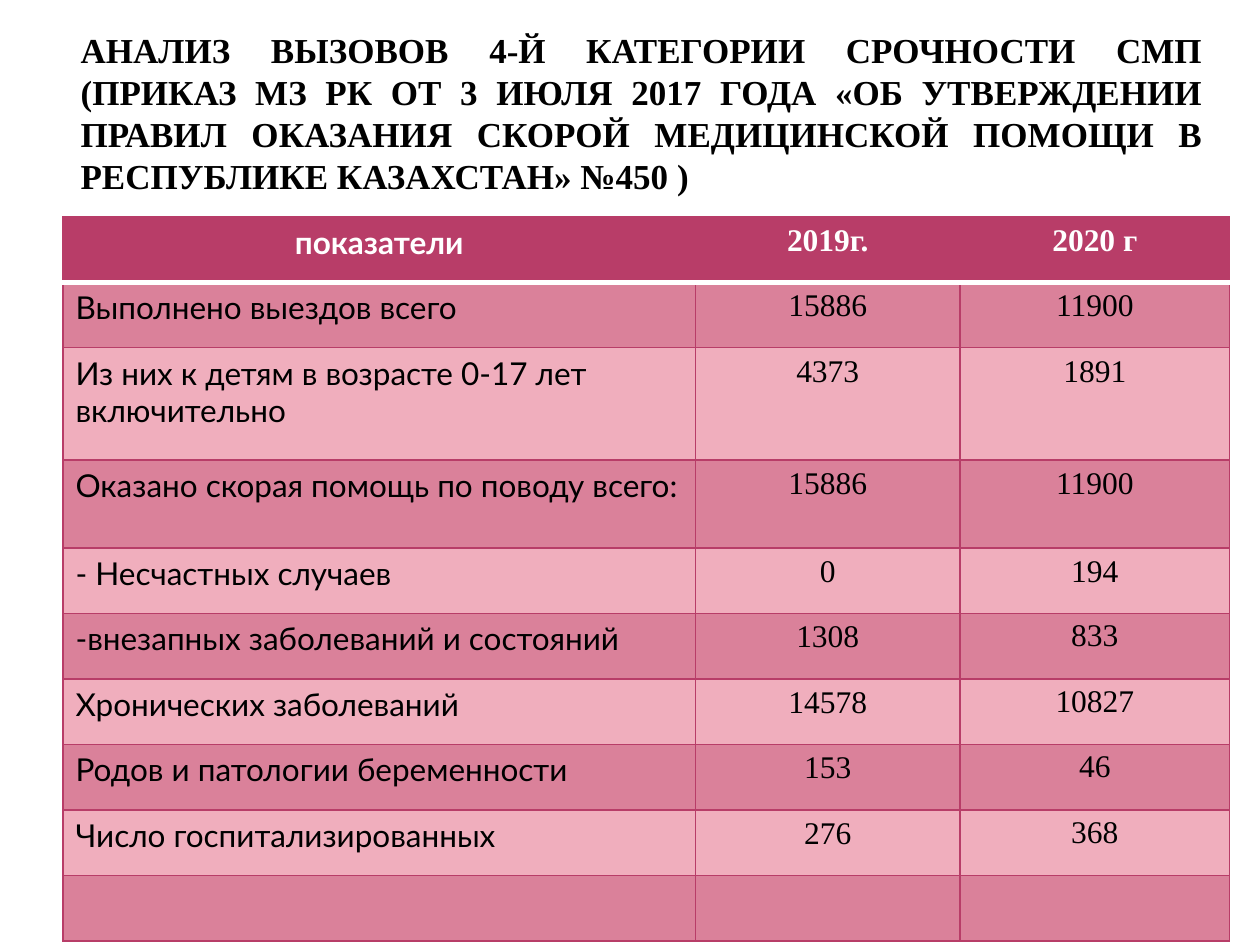
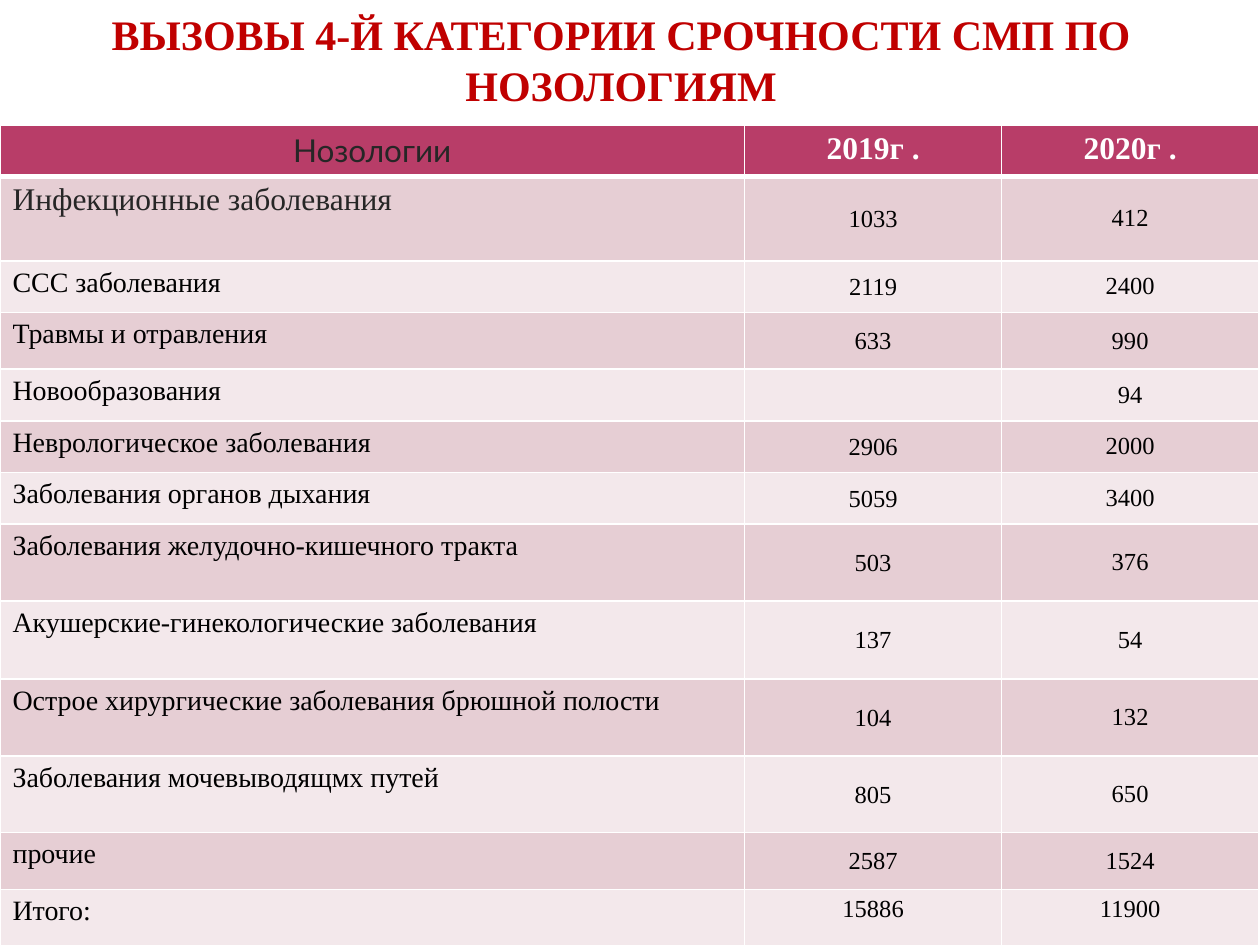
from lxml.etree import SubElement
from pptx import Presentation
from pptx.dml.color import RGBColor
from pptx.enum.text import MSO_ANCHOR, PP_ALIGN
from pptx.oxml.ns import qn
from pptx.util import Inches, Pt

COLORS = {
    "black": "000000", "white": "FFFFFF", "red": "C00000", "dark": "262626",
    "berry": "B83D68", "rose": "DA819A", "pink": "F0AEBD",
    "blush": "E6CED4", "pale": "F3E8EB",
}
SERIF, SANS = "Times New Roman", "Lato"

CALLS = {
    "title": "АНАЛИЗ ВЫЗОВОВ 4-Й КАТЕГОРИИ СРОЧНОСТИ СМП (ПРИКАЗ МЗ РК ОТ 3 ИЮЛЯ 2017 ГОДА "
             "«ОБ УТВЕРЖДЕНИИ ПРАВИЛ ОКАЗАНИЯ СКОРОЙ МЕДИЦИНСКОЙ ПОМОЩИ В РЕСПУБЛИКЕ КАЗАХСТАН» №450 )",
    "title_at": (0.59, 0.44, 9, 1.12),
    "title_style": (20, "black", PP_ALIGN.JUSTIFY, 0),
    "table_at": (0.5, 1.72),
    "columns": (5.02, 2.1, 2.14),
    "heights": (0.52, 0.52, 0.89, 0.7) + (0.52,) * 6,
    "bands": ("rose", "pink"),
    "border": ("berry", 0.9),
    "rows": [
        ("показатели", "2019г.", "2020 г"),
        ("Выполнено выездов всего", "15886", "11900"),
        ("Из них к детям в возрасте 0-17 лет включительно", "4373", "1891"),
        ("Оказано скорая помощь по поводу всего:", "15886", "11900"),
        ("- Несчастных случаев", "0", "194"),
        ("-внезапных заболеваний и состояний", "1308", "833"),
        ("Хронических заболеваний", "14578", "10827"),
        ("Родов и патологии беременности", "153", "46"),
        ("Число госпитализированных", "276", "368"),
        ("", "", ""),
    ],
}

DISEASES = {
    "title": "ВЫЗОВЫ 4-Й КАТЕГОРИИ СРОЧНОСТИ СМП ПО НОЗОЛОГИЯМ",
    "title_at": (0.43, 0, 9, 1.33),
    "title_style": (24, "red", PP_ALIGN.CENTER, 0.46),
    "table_at": (0, 0.99),
    "columns": (5.91, 2.04, 2.04),
    "heights": (0.41, 0.67, 0.41, 0.45, 0.41, 0.41, 0.41, 0.61, 0.62, 0.61, 0.61, 0.45, 0.45),
    "bands": ("blush", "pale"),
    "border": ("white", 1),
    "rows": [
        ("Нозологии", "2019г .", "2020г ."),
        ("Инфекционные заболевания", "1033", "412"),
        ("ССС заболевания", "2119", "2400"),
        ("Травмы и отравления", "633", "990"),
        ("Новообразования", "", "94"),
        ("Неврологическое заболевания", "2906", "2000"),
        ("Заболевания органов дыхания", "5059", "3400"),
        ("Заболевания желудочно-кишечного тракта", "503", "376"),
        ("Акушерские-гинекологические заболевания", "137", "54"),
        ("Острое хирургические заболевания брюшной полости", "104", "132"),
        ("Заболевания мочевыводящмх путей", "805", "650"),
        ("прочие", "2587", "1524"),
        ("Итого:", "15886", "11900"),
    ],
}


def write(para, text, size, font, color, bold=False, align=PP_ALIGN.LEFT):
    para.text = text
    para.alignment = align
    for span in para.runs:
        span.font.size = Pt(size)
        span.font.name = font
        span.font.bold = bold
        span.font.color.rgb = RGBColor.from_string(COLORS[color])


def set_margins(target, left, top, right, bottom):
    target.margin_left, target.margin_top = Inches(left), Inches(top)
    target.margin_right, target.margin_bottom = Inches(right), Inches(bottom)


def add_title(page, content):
    size, color, align, bottom = content["title_style"]
    box = page.shapes.add_textbox(*map(Inches, content["title_at"]))
    frame = box.text_frame
    frame.word_wrap = True
    frame.vertical_anchor = MSO_ANCHOR.BOTTOM
    set_margins(frame, 0.05, 0, 0.05, bottom)
    write(frame.paragraphs[0], content["title"], size, SERIF, color, True, align)


def set_borders(cell, row, border):
    properties = cell._tc.get_or_add_tcPr()
    for side in "LRTB":
        under_header = (row, side) in ((0, "B"), (1, "T"))
        color, width = ("white", 3) if under_header else border
        line = SubElement(properties, qn(f"a:ln{side}"), w=str(Pt(width)))
        fill = SubElement(line, qn("a:solidFill"))
        SubElement(fill, qn("a:srgbClr"), val=COLORS[color])


def add_table(page, content, style_cell):
    rows, columns, heights = content["rows"], content["columns"], content["heights"]
    left, top = content["table_at"]
    frame = page.shapes.add_table(len(rows), len(columns), Inches(left), Inches(top),
                                  Inches(sum(columns)), Inches(sum(heights)))
    table = frame.table
    table.first_row = table.horz_banding = False
    for column, width in zip(table.columns, columns):
        column.width = Inches(width)
    for row, (values, height) in enumerate(zip(rows, heights)):
        table.rows[row].height = Inches(height)
        for column, value in enumerate(values):
            cell = table.cell(row, column)
            set_borders(cell, row, content["border"])
            band = content["bands"][(row - 1) % 2] if row else "berry"
            cell.fill.solid()
            cell.fill.fore_color.rgb = RGBColor.from_string(COLORS[band])
            if value:
                centered = row == 0 or column > 0
                style = style_cell(cell, row, column)
                write(cell.text_frame.paragraphs[0], value, *style,
                      align=PP_ALIGN.CENTER if centered else PP_ALIGN.LEFT)


def style_call(cell, row, column):
    if column == 2 and row > 4:
        set_margins(cell, 0.07, 0, 0.07, 0)
        cell.text_frame.paragraphs[0].line_spacing = 1.15
    header = row == 0
    return 18, SERIF if column else SANS, "white" if header else "black", header


def style_disease(cell, row, column):
    if row == 0:
        return (18, SERIF, "white", True) if column else (18, SANS, "dark")
    if column == 0:
        return (18, SERIF, "dark") if row == 1 else (16, SERIF, "black")
    if row < len(DISEASES["rows"]) - 1:
        cell.vertical_anchor = MSO_ANCHOR.MIDDLE
        inset = 0.01 if column == 1 else 0
        set_margins(cell, inset, inset, inset, 0)
    return 14, SERIF, "black"


def main():
    deck = Presentation()
    deck.slide_width, deck.slide_height = Inches(10), Inches(7.5)
    for content, style_cell in ((CALLS, style_call), (DISEASES, style_disease)):
        page = deck.slides.add_slide(deck.slide_layouts[6])
        add_title(page, content)
        add_table(page, content, style_cell)
    deck.save("out.pptx")


if __name__ == "__main__":
    main()
